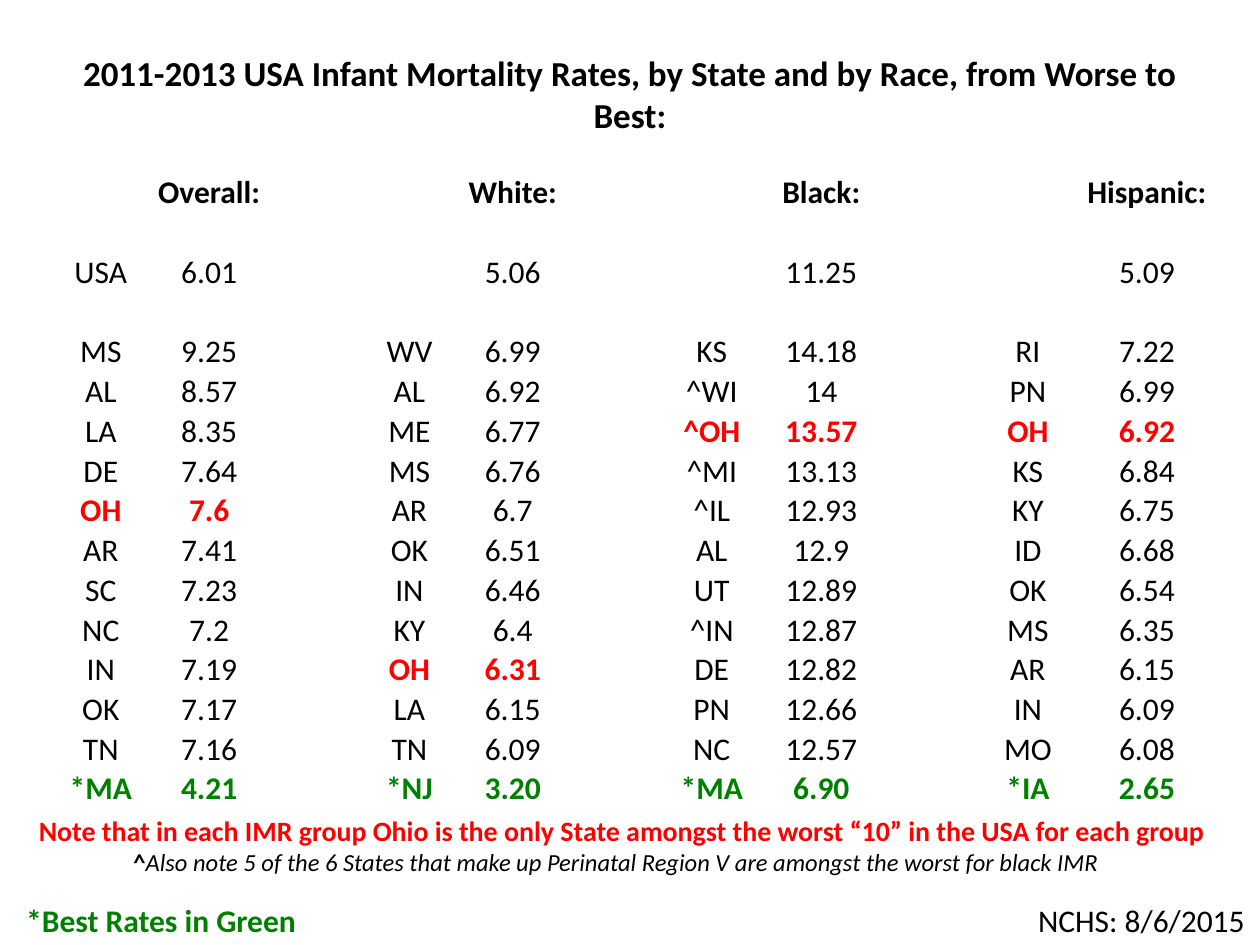
from pptx import Presentation
from pptx.dml.color import RGBColor
from pptx.enum.text import MSO_ANCHOR, PP_ALIGN
from pptx.util import Inches, Pt

CENTER, LEFT = PP_ALIGN.CENTER, PP_ALIGN.LEFT
MIDDLE, TOP, BOTTOM = MSO_ANCHOR.MIDDLE, MSO_ANCHOR.TOP, MSO_ANCHOR.BOTTOM
FONT = "Calibri"
BLACK, RED, GREEN = "000000", "FF0000", "008000"
BLANK_LAYOUT = 6

COLUMN_WIDTHS = [0.82, 0.9, 0.73, 0.82, 0.82, 0.71, 0.92, 0.82, 0.82, 0.82, 1.07]
COLUMNS_PER_GROUP = 3  # state, rate, gap
FIRST_STATE_ROW = 4
# Each group: heading, national rate, then states from worst to best
GROUPS = [
    ("Overall:", "6.01",
     "MS 9.25, AL 8.57, LA 8.35, DE 7.64, OH 7.6, AR 7.41, SC 7.23, NC 7.2, "
     "IN 7.19, OK 7.17, TN 7.16, *MA 4.21"),
    ("White:", "5.06",
     "WV 6.99, AL 6.92, ME 6.77, MS 6.76, AR 6.7, OK 6.51, IN 6.46, KY 6.4, "
     "OH 6.31, LA 6.15, TN 6.09, *NJ 3.20"),
    ("Black:", "11.25",
     "KS 14.18, ^WI 14, ^OH 13.57, ^MI 13.13, ^IL 12.93, AL 12.9, UT 12.89, "
     "^IN 12.87, DE 12.82, PN 12.66, NC 12.57, *MA 6.90"),
    ("Hispanic:", "5.09",
     "RI 7.22, PN 6.99, OH 6.92, KS 6.84, KY 6.75, ID 6.68, OK 6.54, MS 6.35, "
     "AR 6.15, IN 6.09, MO 6.08, *IA 2.65"),
]


def rgb(value):
    return RGBColor.from_string(value)


def format_run(run, size, color=BLACK, bold=False, italic=False):
    font = run.font
    font.name, font.size = FONT, Pt(size)
    font.bold, font.italic = bold, italic
    font.color.rgb = rgb(color)


def add_text(slide, box, text, size, color=BLACK, bold=False,
             align=LEFT, anchor=TOP, wrap=False):
    shape = slide.shapes.add_textbox(*map(Inches, box))
    frame = shape.text_frame
    frame.word_wrap = wrap
    frame.vertical_anchor = anchor
    frame.text = text
    paragraph = frame.paragraphs[0]
    paragraph.alignment = align
    format_run(paragraph.runs[0], size, color, bold)
    return frame


def write_cell(cell, text, color=BLACK, bold=False):
    cell.text = text
    paragraph = cell.text_frame.paragraphs[0]
    paragraph.alignment = CENTER
    format_run(paragraph.runs[0], 18, color, bold)


def state_style(state):
    """Return colour and weight: best state green, Ohio red."""
    if state.startswith("*"):
        return GREEN, True
    if state.endswith("OH"):
        return RED, True
    return BLACK, False


def add_rate_table(slide, box):
    row_count = FIRST_STATE_ROW + len(GROUPS[0][2].split(", "))
    table = slide.shapes.add_table(
        row_count, len(COLUMN_WIDTHS), *map(Inches, box)).table
    table.first_row = table.horz_banding = False
    for column, width in zip(table.columns, COLUMN_WIDTHS):
        column.width = Inches(width)
    for cell in table.iter_cells():
        cell.fill.background()
        cell.vertical_anchor = BOTTOM
        cell.margin_left = cell.margin_right = cell.margin_top = Inches(0.01)
        cell.margin_bottom = 0

    write_cell(table.cell(2, 0), "USA")
    for group, (heading, national_rate, states) in enumerate(GROUPS):
        state_column = group * COLUMNS_PER_GROUP
        rate_column = state_column + 1
        write_cell(table.cell(0, rate_column), heading, bold=True)
        write_cell(table.cell(2, rate_column), national_rate)
        for row, entry in enumerate(states.split(", "), FIRST_STATE_ROW):
            state, rate = entry.split()
            style = state_style(state)
            write_cell(table.cell(row, state_column), state, *style)
            write_cell(table.cell(row, rate_column), rate, *style)


def add_notes_on_ranking(slide, box):
    frame = add_text(
        slide, box,
        "Note that in each IMR group Ohio is the only State amongst "
        "the worst “10” in the USA for each group", 16, RED, True)
    paragraph = frame.add_paragraph()
    paragraph.alignment = LEFT
    properties = paragraph._p.get_or_add_pPr()
    properties.set("marL", str(Inches(0.75)))
    properties.set("indent", "0")
    marker, remark = paragraph.add_run(), paragraph.add_run()
    marker.text = "^"
    remark.text = ("Also note 5 of the 6 States that make up Perinatal Region V "
                   "are amongst the worst for black IMR")
    format_run(marker, 14, bold=True)
    format_run(remark, 14, italic=True)


def main():
    presentation = Presentation()
    presentation.slide_width, presentation.slide_height = Inches(10), Inches(7.5)
    slide = presentation.slides.add_slide(presentation.slide_layouts[BLANK_LAYOUT])
    add_rate_table(slide, (0.39, 1.37, sum(COLUMN_WIDTHS), 5))
    add_text(slide, (8.14, 7.1, 1.86, 0.4), "NCHS: 8/6/2015", 18)
    add_text(slide, (0.5, 0.12, 9, 1.25),
             "2011-2013 USA Infant Mortality Rates, by State and by Race, "
             "from Worse to Best:", 20, bold=True,
             align=CENTER, anchor=MIDDLE, wrap=True)
    add_text(slide, (0.11, 7.1, 2.38, 0.4), "*Best Rates in Green", 18, GREEN, True)
    add_notes_on_ranking(slide, (0.21, 6.41, 9.61, 0.61))
    presentation.save("out.pptx")


if __name__ == "__main__":
    main()
